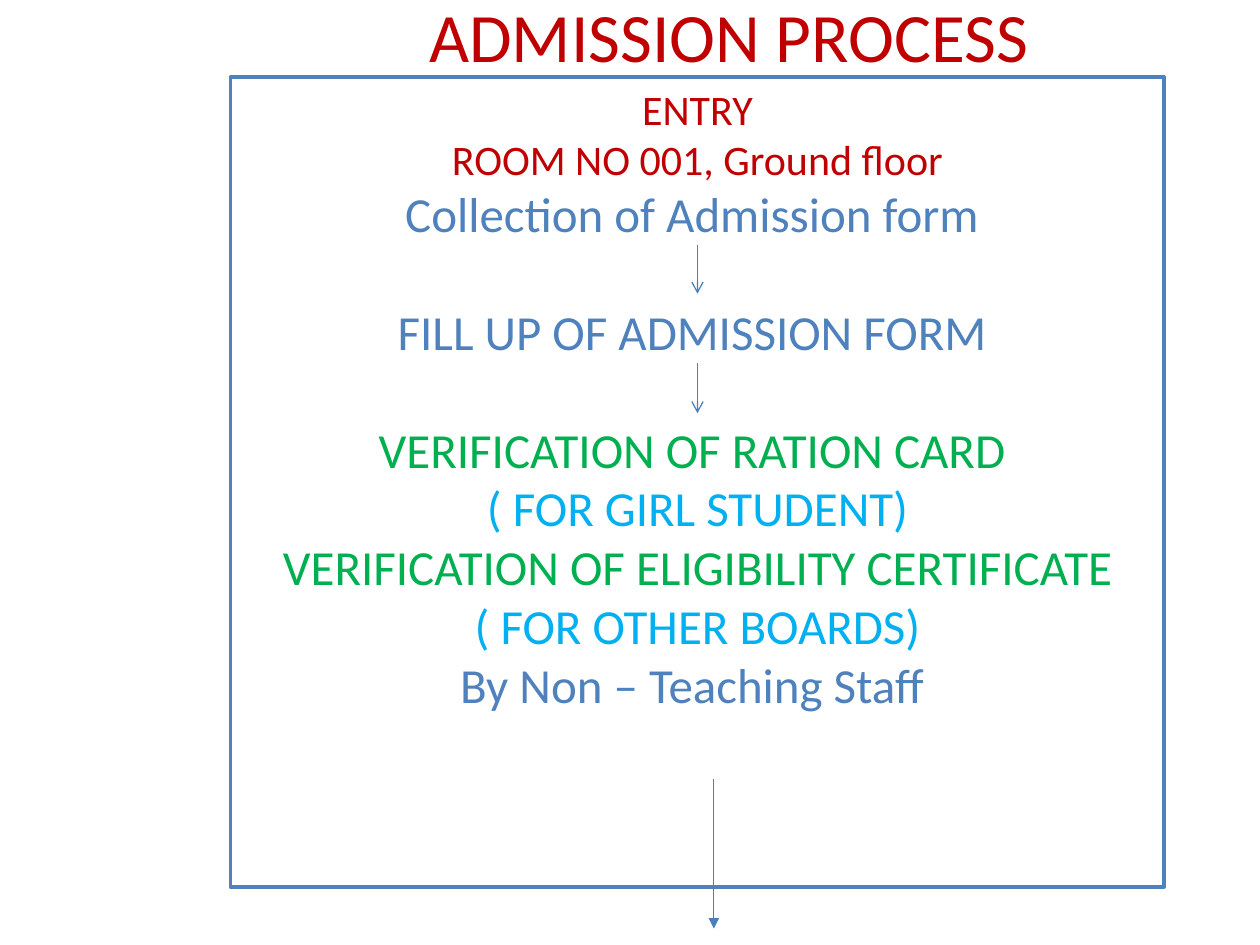
from lxml import etree
from pptx import Presentation
from pptx import util as u
from pptx.dml.color import RGBColor
from pptx.enum import shapes, text
from pptx.oxml import ns

COLORS = {"red": "C00000", "blue": "4F81BD", "arrow": "4B7EBC",
          "green": "00B050", "sky": "00B0F0", "white": "FFFFFF"}
FONT = "Calibri"
STEP_GAP = 33.6
STEPS = [
    ("ENTRY", 24, "red", 0),
    ("ROOM NO 001, Ground floor", 24, "red", 0),
    ("Collection of Admission form ", 28, "blue", 0),
    ("FILL UP OF ADMISSION FORM ", 28, "blue", STEP_GAP),
    ("VERIFICATION OF RATION CARD ", 28, "green", STEP_GAP),
    ("( FOR GIRL STUDENT)", 28, "sky", 0),
    ("VERIFICATION OF ELIGIBILITY CERTIFICATE", 28, "green", 0),
    ("( FOR OTHER BOARDS)", 28, "sky", 0),
    ("By Non – Teaching Staff ", 28, "blue", 0),
]
ARROWS = [(0.33, 14.15, 17.17, "triangle"),
          (0, 3.38, 4.37, "arrow"),
          (0, 5.77, 6.78, "arrow")]


def rgb(name):
    """Return the named colour."""
    return RGBColor.from_string(COLORS[name])


def style(paragraph, size, color):
    """Centre a paragraph and set its font."""
    paragraph.alignment = text.PP_ALIGN.CENTER
    paragraph.font.name = FONT
    paragraph.font.size = u.Pt(size)
    paragraph.font.color.rgb = rgb(color)


def add_title(slide, left, top, width, height):
    """Place the heading in the upper part of its box."""
    title = slide.shapes.title
    title.left, title.top, title.width, title.height = map(
        u.Cm, (left, top, width, height))
    frame = title.text_frame
    frame.text = "ADMISSION PROCESS"
    frame.auto_size = text.MSO_AUTO_SIZE.NONE
    frame.vertical_anchor = text.MSO_ANCHOR.MIDDLE
    frame.margin_bottom = u.Cm(1.6)
    style(frame.paragraphs[0], 39.6, "red")


def add_arrow(slide, x, start, end, head):
    """Draw a downward arrow."""
    arrow = slide.shapes.add_connector(
        shapes.MSO_CONNECTOR.STRAIGHT, u.Cm(x), u.Cm(start), u.Cm(x), u.Cm(end))
    arrow.line.color.rgb = rgb("arrow")
    arrow.line.width = u.Pt(0.75)
    etree.SubElement(arrow.line._get_or_add_ln(), ns.qn("a:tailEnd"), type=head)
    etree.SubElement(arrow._element.spPr, ns.qn("a:effectLst"))


def add_process(slide, left, top, width, height):
    """Place the framed admission steps and their arrows."""
    frame_box = slide.shapes.add_shape(
        shapes.MSO_SHAPE.RECTANGLE, *map(u.Cm, (left, top, width, height)))
    frame_box.shadow.inherit = False
    frame_box.fill.solid()
    frame_box.fill.fore_color.rgb = rgb("white")
    frame_box.line.color.rgb = rgb("blue")
    frame_box.line.width = u.Pt(2)
    steps = frame_box.text_frame
    steps.word_wrap = True
    steps.vertical_anchor = text.MSO_ANCHOR.TOP
    steps.text = "\n".join(step[0] for step in STEPS)
    for paragraph, (_, size, color, gap) in zip(steps.paragraphs, STEPS):
        style(paragraph, size, color)
        paragraph.space_before = u.Pt(gap)
    for shift, start, end, head in ARROWS:
        add_arrow(slide, left + width / 2 + shift, top + start, top + end, head)


def main():
    """Build and save the admission slide."""
    deck = Presentation()
    deck.slide_width, deck.slide_height = u.Cm(25.4), u.Cm(19.05)
    slide = deck.slides.add_slide(deck.slide_layouts[5])
    add_title(slide, 5.41, 0.33, 18.57, 2.21)
    add_process(slide, 4.65, 1.55, 18.82, 16.33)
    deck.save("out.pptx")


if __name__ == "__main__":
    main()
